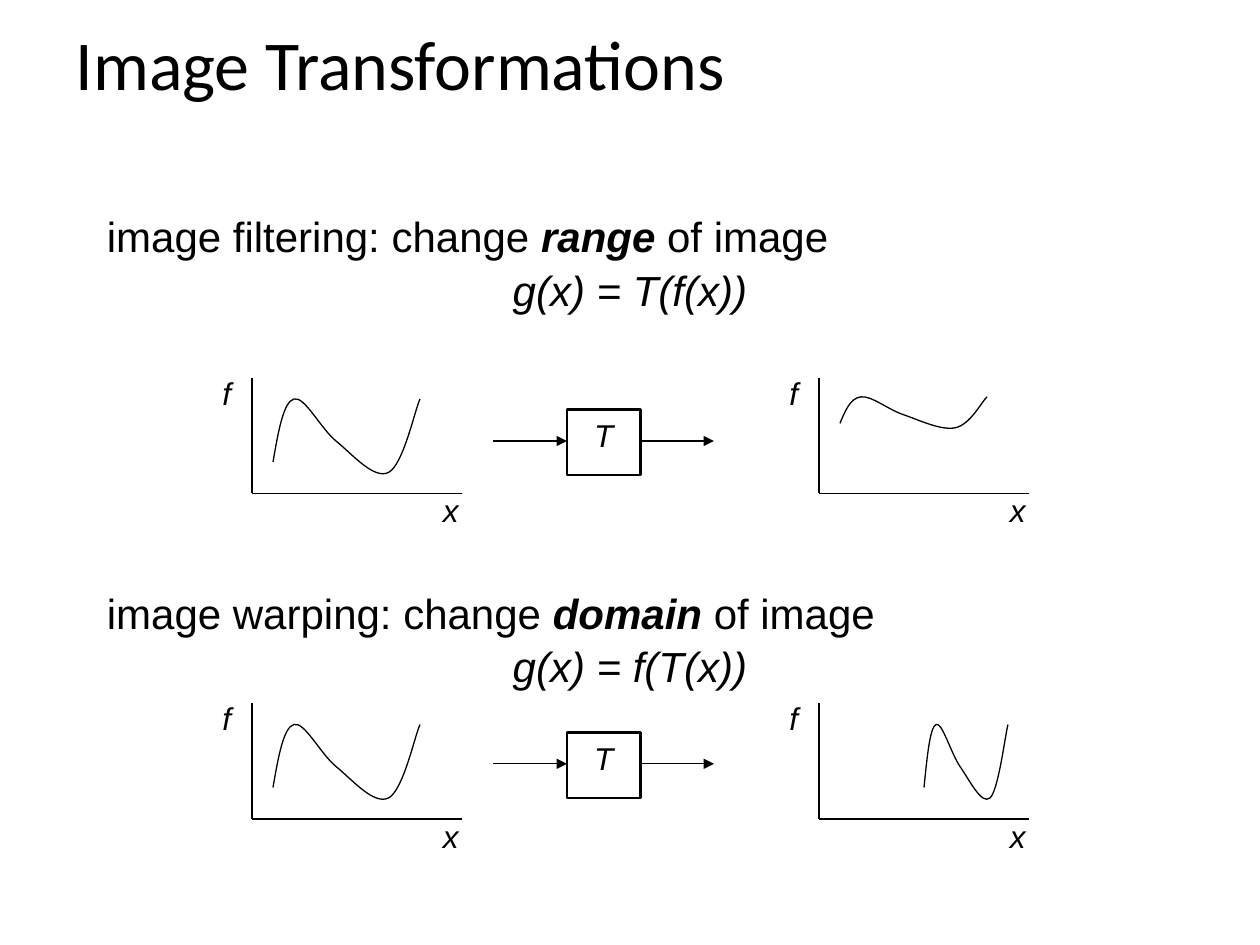
from dataclasses import dataclass

from lxml import etree
from pptx import Presentation
from pptx import util as u
from pptx.dml.color import RGBColor
from pptx.enum import shapes, text
from pptx.oxml.ns import qn


@dataclass
class Theme:
    ink = RGBColor(0, 0, 0)
    head = "Calibri"
    font = "Arial"
    title = 40
    body = 24
    label = 18
    thin = 0.75
    thick = 1.5


CURVE = [(0, 6), (0.5, 3.14), (1, 0.25), (2, 0), (3, -0.3), (4.5, 2.75), (6, 4),
         (7.5, 5.2), (9.6, 7.7), (11, 7), (12.4, 6.3), (13.5, 1.1), (14, 0)]


def cell(n):
    return u.Inches(n / 12)


def style(run, size, font=Theme.font, bold=False, slant=False):
    run.font.size = u.Pt(size)
    run.font.name = font
    run.font.bold = bold
    run.font.italic = slant
    run.font.color.rgb = Theme.ink


def space(para, share):
    para.space_before = u.Pt(0)
    gap = para._p.pPr.find(qn("a:spcBef"))
    gap.clear()
    etree.SubElement(gap, qn("a:spcPct")).set("val", str(share * 1000))


def stroke(shape, width):
    shape.line.color.rgb = Theme.ink
    shape.line.width = u.Pt(width)


def line(group, x, y, to_x, to_y, arrow=False):
    link = group.shapes.add_connector(
        shapes.MSO_CONNECTOR.STRAIGHT, cell(x), cell(y), cell(to_x), cell(to_y))
    stroke(link, Theme.thin)
    if arrow:
        etree.SubElement(link.line._get_or_add_ln(), qn("a:tailEnd")).set("type", "triangle")
    etree.SubElement(link._element.spPr, qn("a:effectLst"))


def write(shape, words):
    para = shape.text_frame.paragraphs[0]
    para.text = words
    space(para, 50)
    style(para.runs[0], Theme.label, slant=True)
    return para


def label(group, x, y, words):
    box = group.shapes.add_textbox(cell(x), cell(y), cell(5), cell(4.8))
    box.text_frame.word_wrap = True
    write(box, words)


def smooth(shape):
    legs = list(shape._element.iter(qn("a:lnTo")))
    for i in range(0, len(legs), 3):
        first, *rest = legs[i:i + 3]
        first.tag = qn("a:cubicBezTo")
        for leg in rest:
            first.append(leg[0])
            leg.getparent().remove(leg)


def curve(group, x, y, wide, high):
    spots = [(cell(x + p * wide), cell(y + q * high)) for p, q in CURVE]
    pen = group.shapes.build_freeform(*spots[0])
    pen.add_line_segments(spots[1:], close=False)
    shape = pen.convert_to_shape()
    smooth(shape)
    shape.shadow.inherit = False
    shape.fill.background()
    stroke(shape, Theme.thin)


def plot(slide, x, y, left=2, top=2, wide=1, high=1):
    group = slide.shapes.add_group_shape()
    line(group, x, y, x, y + 11)
    line(group, x, y + 11, x + 20, y + 11)
    curve(group, x + left, y + top, wide, high)
    label(group, x - 4, y - 1, "f")
    label(group, x + 17, y + 10.2, "x")


def stage(slide, x, y):
    group = slide.shapes.add_group_shape()
    box = group.shapes.add_shape(
        shapes.MSO_SHAPE.RECTANGLE, cell(x), cell(y - 3), cell(7), cell(6.25))
    box.shadow.inherit = False
    box.fill.background()
    stroke(box, Theme.thick)
    box.text_frame.vertical_anchor = text.MSO_ANCHOR.TOP
    write(box, "T").alignment = text.PP_ALIGN.CENTER
    for start in (x - 7, x + 7):
        line(group, start, y, start + 7, y, arrow=True)


def prose(slide, y, lead, key, rule, pitch):
    box = slide.shapes.add_textbox(cell(9), cell(y), cell(102), cell(13))
    frame = box.text_frame
    frame.word_wrap = True
    first, last = frame.paragraphs[0], frame.add_paragraph()
    for words, strong in ((lead, False), (key, True), (" of image", False)):
        run = first.add_run()
        run.text = words
        style(run, Theme.body, bold=strong, slant=strong)
    last.text = rule
    last.alignment = text.PP_ALIGN.CENTER
    style(last.runs[0], Theme.body, slant=True)
    for para, ratio in ((first, pitch), (last, 0.9)):
        para.line_spacing = ratio
        space(para, 20)
        para._p.pPr.set("marL", str(cell(4.5)))
        para._p.pPr.set("indent", str(-cell(4.5)))


def head(slide, words):
    title = slide.shapes.title
    title.left, title.top, title.width, title.height = cell(6), 0, cell(108), cell(12)
    frame = title.text_frame
    frame.text = words
    frame.vertical_anchor = text.MSO_ANCHOR.MIDDLE
    para = frame.paragraphs[0]
    para.alignment = text.PP_ALIGN.LEFT
    style(para.runs[0], Theme.title, Theme.head)


def main():
    deck = Presentation()
    deck.slide_width, deck.slide_height = u.Inches(10), u.Inches(7.5)
    slide = deck.slides.add_slide(deck.slide_layouts[5])
    head(slide, "Image Transformations")
    prose(slide, 20, "image filtering: change ", "range", "g(x) = T(f(x))", 0.9)
    flat = {"top": 1.8, "high": 0.42}
    slim = {"left": 10, "wide": 4 / 7}
    for top, mid, change in ((36, 42, flat), (67, 72.75, slim)):
        plot(slide, 24, top)
        stage(slide, 54, mid)
        plot(slide, 78, top, **change)
    prose(slide, 52, "image warping: change ", "domain", "g(x) = f(T(x))", 1.7)
    deck.save("out.pptx")


if __name__ == "__main__":
    main()
